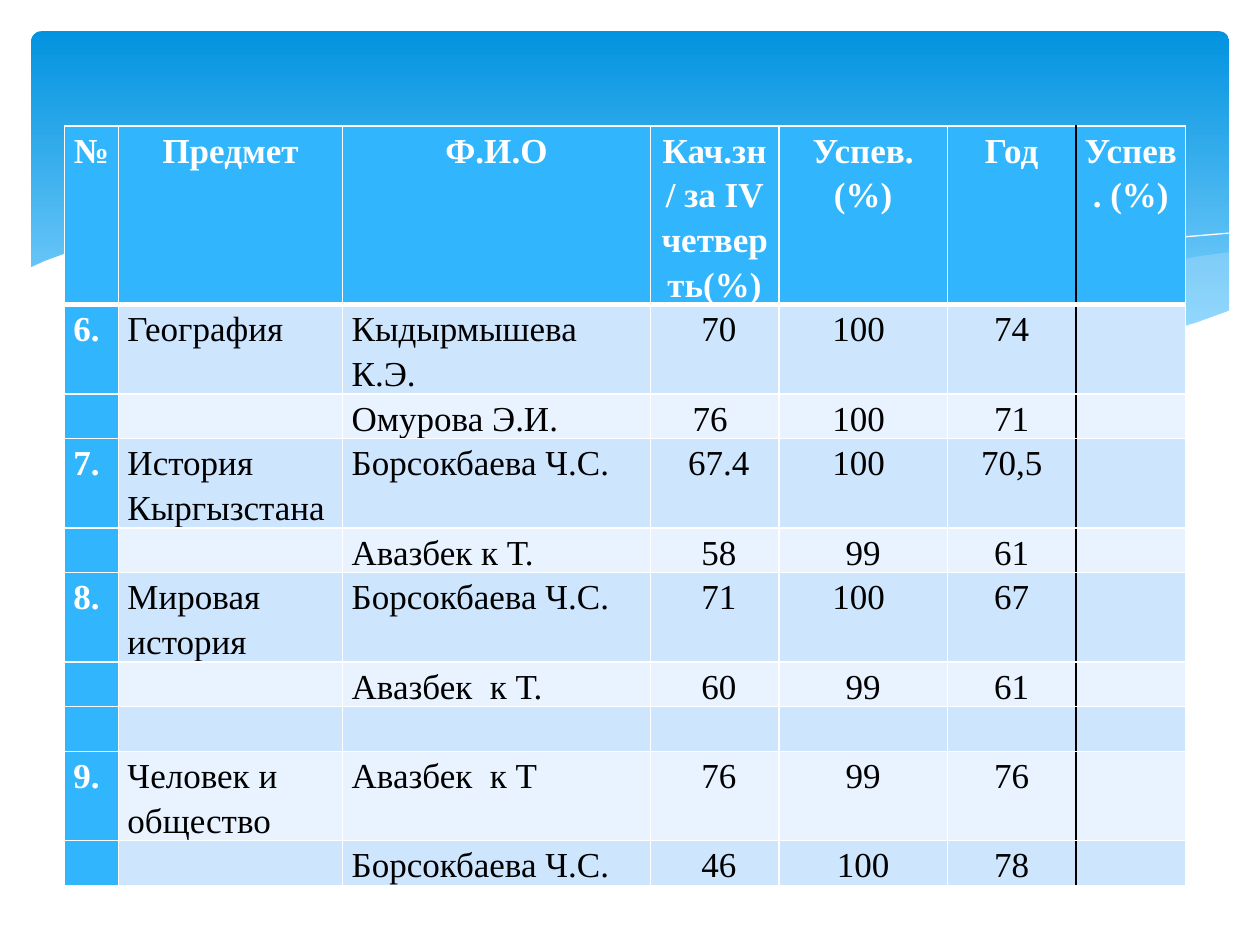
from pptx import Presentation
from pptx.dml.color import RGBColor
from pptx.enum.shapes import MSO_SHAPE
from pptx.enum.text import PP_ALIGN
from pptx.oxml.ns import qn
from pptx.util import Cm, Pt
from lxml import etree

ROUNDED = MSO_SHAPE.ROUNDED_RECTANGLE
LEFT, CENTER = PP_ALIGN.LEFT, PP_ALIGN.CENTER

WHITE = RGBColor(0xFF, 0xFF, 0xFF)
BLACK = RGBColor(0x00, 0x00, 0x00)
SKY_DARK = RGBColor(0x02, 0x93, 0xE0)
SKY_LIGHT = RGBColor(0x83, 0xD3, 0xFE)
MIST = RGBColor(0xC6, 0xE7, 0xFC)
ACCENT = RGBColor(0x31, 0xB6, 0xFD)
BAND_ODD = RGBColor(0xCE, 0xE5, 0xFE)
BAND_EVEN = RGBColor(0xE8, 0xF3, 0xFF)

RIGHT_WAVE = [
    (24.79, 5.08), (24.08, 5.18), (23.39, 5.33), (22.63, 5.49), (21.87, 5.66),
    (20.45, 6.02), (19.13, 6.3), (17.93, 6.53), (16.79, 6.73), (17.55, 6.83),
    (18.26, 6.91), (18.92, 6.99), (19.84, 7.04), (20.68, 7.06), (21.69, 7.01),
    (22.58, 6.91), (23.39, 6.73), (24.1, 6.53), (24.79, 6.27)]
MIDDLE_WAVE = [
    (22.68, 6.93), (21.26, 6.73), (19.69, 6.45), (17.93, 6.1), (15.98, 5.64),
    (14.45, 5.28), (13.06, 5.03), (11.81, 4.85), (10.67, 4.75), (9.65, 4.7),
    (8.74, 4.72), (7.95, 4.78), (7.26, 4.85), (8.69, 5.05), (10.26, 5.36),
    (11.4, 5.64), (13.46, 6.1), (15.27, 6.48), (16.89, 6.76), (18.34, 6.96),
    (19.63, 7.04), (20.78, 7.06), (21.77, 7.04)]
FALLING_LINE = [
    (7.85, 4.95), (8.74, 4.83), (9.83, 4.75), (11, 4.75), (12.42, 4.83), (14.12, 5),
    (16.15, 5.28), (18.47, 5.74), (20.19, 6.12), (22.07, 6.63), (23.04, 6.91)]
RISING_LINE = [
    (15.57, 6.53), (17.65, 5.97), (19.71, 5.49), (21.23, 5.18), (22.73, 4.93),
    (23.83, 4.78), (24.77, 4.7)]
WHITE_WAVE = [
    (24.82, 6.25), (24.13, 6.5), (23.37, 6.73), (22.53, 6.88), (21.59, 6.99),
    (20.55, 7.04), (19.33, 6.99), (17.98, 6.86), (16.46, 6.65), (14.71, 6.35),
    (12.78, 5.92), (11.35, 5.59), (9.27, 5.13), (8.03, 4.93), (6.88, 4.78),
    (5.84, 4.7), (4.9, 4.67), (4.09, 4.67), (3.35, 4.72), (2.69, 4.8),
    (1.93, 4.95), (1.32, 5.11), (0.91, 5.26), (0.58, 5.41), (0.58, 8.36), (24.82, 8.36)]

COLUMNS = [1.09, 4.52, 6.2, 2.59, 3.4, 2.59, 2.21]
HEADER, DOUBLE, SINGLE = 3.58, 1.8, 0.9
ROWS = [
    (HEADER, ["№", "Предмет", "Ф.И.О", "Кач.зн/ за IV четверть(%)", "Успев. (%)", "Год",
              "Успев. (%)"]),
    (DOUBLE, ["6.", "География", "Кыдырмышева К.Э.", " 70", "100 ", "74", ""]),
    (SINGLE, ["", "", "Омурова Э.И.", "76 ", "100 ", "71", ""]),
    (DOUBLE, ["7.", "История Кыргызстана", "Борсокбаева Ч.С.", " 67.4", "100 ", "70,5", ""]),
    (SINGLE, ["", "", "Авазбек к Т.", " 58", "99", "61", ""]),
    (DOUBLE, ["8.", "Мировая история", "Борсокбаева Ч.С.", " 71", "100 ", "67", ""]),
    (SINGLE, ["", "", "Авазбек  к Т.", " 60", "99", "61", ""]),
    (SINGLE, [""] * 7),
    (DOUBLE, ["9.", "Человек и общество", "Авазбек  к Т", " 76", "99", "76", ""]),
    (SINGLE, ["", "", "Борсокбаева Ч.С.", " 46", "100", "78", ""]),
]


def write(tf, text, font="Times New Roman", size=20, color=BLACK, bold=False, align=LEFT):
    """Put one formatted paragraph into a text frame."""
    p = tf.paragraphs[0]
    p.alignment = align
    p.line_spacing = 1.15
    p.font.size = Pt(size)
    if text:
        r = p.add_run()
        r.text = text
        r.font.name = font
        r.font.size = Pt(size)
        r.font.bold = bold
        r.font.color.rgb = color


def set_border(cell, side, color, width):
    """Draw one border of a table cell."""
    tcPr = cell._tc.get_or_add_tcPr()
    ln = etree.SubElement(tcPr, qn(f"a:ln{side}"), w=str(Pt(width)))
    fill = etree.SubElement(ln, qn("a:solidFill"))
    etree.SubElement(fill, qn("a:srgbClr"), val=str(color))


class SlideBuilder:
    """Hold the current slide and draw its elements in one style."""

    def __init__(self, s):
        self.s = s

    def banner(self, left, top, width, height):
        """Add the rounded gradient banner."""
        sp = self.s.shapes.add_shape(ROUNDED, Cm(left), Cm(top), Cm(width), Cm(height))
        sp.adjustments[0] = 0.03
        sp.shadow.inherit = False
        sp.line.fill.background()
        sp.fill.gradient()
        sp.fill.gradient_angle = 270
        stops = sp.fill.gradient_stops
        for stop, color, position in zip(stops, (SKY_DARK, SKY_LIGHT), (0, 0.9)):
            stop.color.rgb = color
            stop.position = position

    def outline(self, points, close):
        """Add a freeform through points given in centimetres."""
        points = [(Cm(x), Cm(y)) for x, y in points]
        builder = self.s.shapes.build_freeform(*points[0])
        builder.add_line_segments(points[1:], close=close)
        sp = builder.convert_to_shape()
        sp.shadow.inherit = False
        return sp

    def wave(self, points, color, opacity=100):
        """Add a filled wave."""
        sp = self.outline(points, True)
        sp.line.fill.background()
        sp.fill.solid()
        sp.fill.fore_color.rgb = color
        if opacity < 100:
            clr = sp._element.spPr.find(qn("a:solidFill"))[0]
            etree.SubElement(clr, qn("a:alpha"), val=str(opacity * 1000))

    def curve(self, points):
        """Add a thin white curve."""
        sp = self.outline(points, False)
        sp.fill.background()
        sp.line.color.rgb = WHITE
        sp.line.width = Pt(0)

    def table(self, left, top, columns, rows):
        """Add the table of marks."""
        heights = [height for height, _ in rows]
        frame = self.s.shapes.add_table(len(rows), len(columns), Cm(left), Cm(top),
                                        Cm(sum(columns)), Cm(sum(heights)))
        table = frame.table
        for column, width in zip(table.columns, columns):
            column.width = Cm(width)
        for i, (height, texts) in enumerate(rows):
            table.rows[i].height = Cm(height)
            for j, text in enumerate(texts):
                self.cell(table.cell(i, j), i, j, text)

    def cell(self, cell, i, j, text):
        """Format one cell by its row and column."""
        accent = i == 0 or j == 0
        cell.margin_left = cell.margin_right = Cm(0.18 if i else 0.15)
        cell.margin_top = cell.margin_bottom = 0
        set_border(cell, "L", BLACK if j == 6 else WHITE, 1)
        set_border(cell, "R", BLACK if j == 5 else WHITE, 1)
        set_border(cell, "T", WHITE, 3 if i == 1 else 1)
        set_border(cell, "B", WHITE, 3 if i == 0 else 1)
        cell.fill.solid()
        cell.fill.fore_color.rgb = ACCENT if accent else BAND_ODD if i % 2 else BAND_EVEN
        write(cell.text_frame, text, color=WHITE if accent else BLACK, bold=accent,
              align=CENTER if i == 0 or j > 2 else LEFT)


def main():
    """Build the slide and save it."""
    prs = Presentation()
    prs.slide_width, prs.slide_height = Cm(25.4), Cm(19.05)
    builder = SlideBuilder(prs.slides.add_slide(prs.slide_layouts[6]))
    builder.banner(0.63, 0.63, 24.15, 6.86)
    builder.wave(RIGHT_WAVE, MIST, opacity=29)
    builder.wave(MIDDLE_WAVE, MIST, opacity=40)
    builder.curve(FALLING_LINE)
    builder.curve(RISING_LINE)
    builder.wave(WHITE_WAVE, WHITE)
    builder.table(1.3, 2.54, COLUMNS, ROWS)
    prs.save("out.pptx")


if __name__ == "__main__":
    main()
